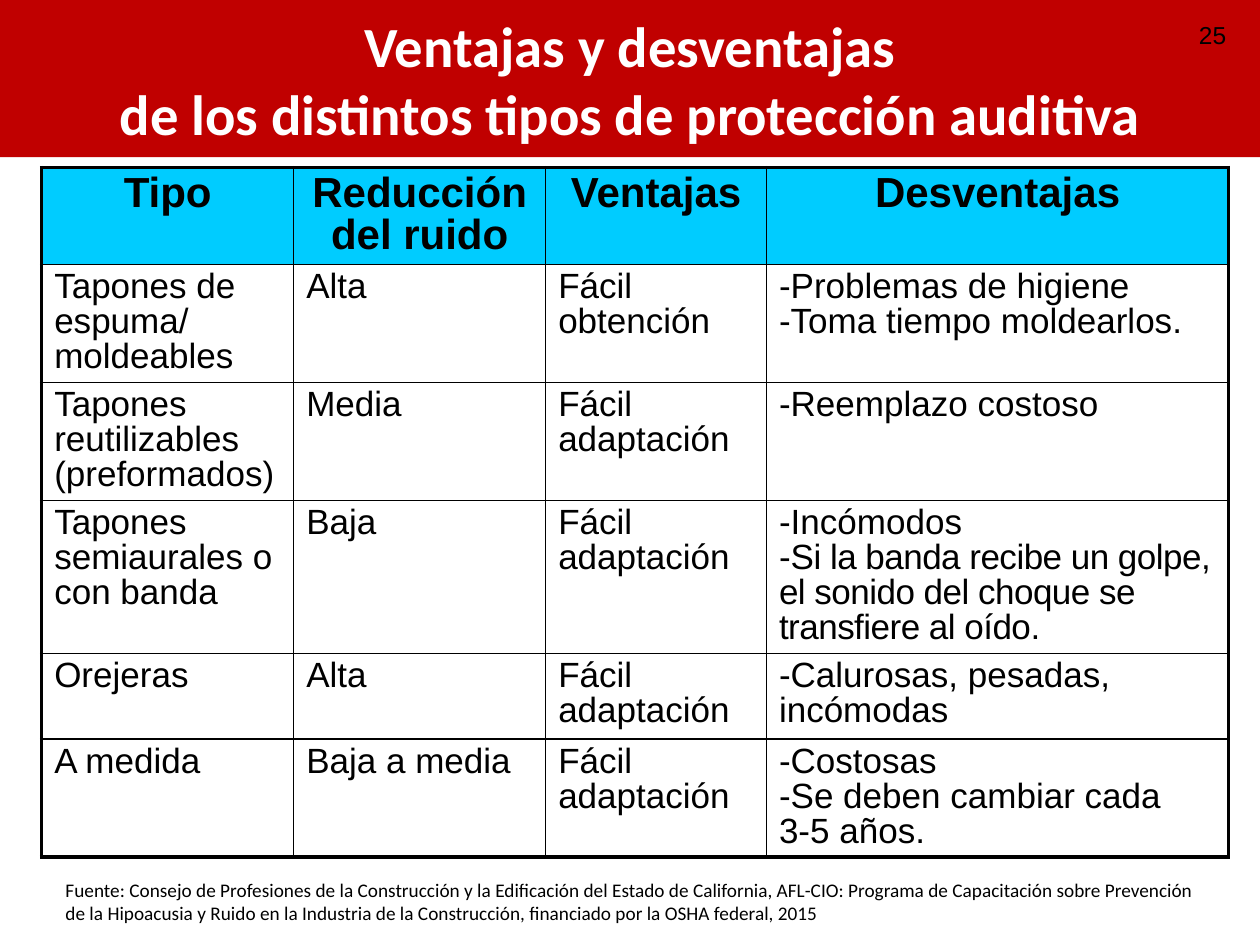
from lxml.etree import SubElement
from pptx import Presentation
from pptx.dml.color import RGBColor
from pptx.enum.shapes import MSO_SHAPE
from pptx.enum.text import MSO_ANCHOR, PP_ALIGN
from pptx.oxml.ns import qn
from pptx.util import Cm, Pt

COLORS = {"red": "C00000", "cyan": "00CCFF", "black": "000000", "white": "FFFFFF"}


def add_text(para, text, size, font="Arial", color="black", bold=False, spacing=0):
    """Add one run per line, with line breaks between them."""
    for index, line in enumerate(text.split("\n")):
        if index:
            para.add_line_break()
        if not line:
            continue
        span = para.add_run()
        span.text = line
        span.font.size = Pt(size)
        span.font.name = font
        span.font.bold = bold
        span.font.color.rgb = RGBColor.from_string(COLORS[color])
        if spacing:
            span.font._element.set("spc", str(spacing))


def set_border(cell, side, width, position):
    line = SubElement(cell._tc.get_or_add_tcPr(), qn(f"a:ln{side}"), w=str(Pt(width)))
    fill = SubElement(line, qn("a:solidFill"))
    SubElement(fill, qn("a:srgbClr"), val=COLORS["black"])
    cell._tc.tcPr.insert(position, line)


deck = Presentation()
deck.slide_width, deck.slide_height = Cm(25.4), Cm(19.05)
page = deck.slides.add_slide(deck.slide_layouts[6])

# Title band
band = page.shapes.add_shape(MSO_SHAPE.RECTANGLE, 0, 0, deck.slide_width, Cm(3.17))
band.shadow.inherit = False
band.fill.solid()
band.fill.fore_color.rgb = RGBColor.from_string(COLORS["red"])
band.line.fill.background()
band.text_frame.word_wrap = True
band.text_frame.vertical_anchor = MSO_ANCHOR.MIDDLE
para = band.text_frame.paragraphs[0]
para.alignment = PP_ALIGN.CENTER
add_text(para, "Ventajas y desventajas\nde los distintos tipos de protección auditiva",
         32.4, "Calibri", "white", bold=True)

# Comparison table: a cell is a text, or a list of (text, letter spacing)
rows = [
    ["Tipo", "Reducción del ruido", "Ventajas", "Desventajas"],
    ["Tapones de espuma/\nmoldeables", "Alta", "Fácil obtención",
     "-Problemas de higiene\n-Toma tiempo moldearlos."],
    ["Tapones reutilizables (preformados)", "Media", "Fácil adaptación",
     "-Reemplazo costoso"],
    ["Tapones semiaurales o\ncon banda", "Baja", "Fácil adaptación",
     [("-Incómodos\n-", 0),
      ("Si la banda recibe un golpe, el sonido del choque se transfiere al oído.", -30)]],
    ["Orejeras", "Alta", "Fácil adaptación", "-Calurosas, pesadas, incómodas"],
    ["A medida", "Baja a media", "Fácil adaptación",
     [("-Costosas\n", 0), ("-", -40), ("Se deben cambiar cada \n3-5 años.", 0)]],
]
widths = [5.08, 5.08, 4.45, 9.32]
heights = [1.93, 2.38, 2.38, 3.08, 1.73, 2.37]
frame = page.shapes.add_table(len(rows), len(widths), Cm(0.84), Cm(3.38),
                              Cm(sum(widths)), Cm(sum(heights)))
table = frame.table
table.first_row = table.horz_banding = False
for column, width in zip(table.columns, widths):
    column.width = Cm(width)
for table_row, height in zip(table.rows, heights):
    table_row.height = Cm(height)

last_row, last_column = len(rows) - 1, len(widths) - 1
for r, row in enumerate(rows):
    header = r == 0
    size = 24 if header else 20
    for c, content in enumerate(row):
        cell = table.cell(r, c)
        if header:
            cell.fill.solid()
            cell.fill.fore_color.rgb = RGBColor.from_string(COLORS["cyan"])
        else:
            cell.fill.background()
        para = cell.text_frame.paragraphs[0]
        para.alignment = PP_ALIGN.CENTER if header else PP_ALIGN.LEFT
        para.line_spacing = Pt(size)
        parts = [(content, 0)] if isinstance(content, str) else content
        for text, spacing in parts:
            add_text(para, text, size, bold=header, spacing=spacing)
        # Thick lines around the table, thin lines inside
        outer = {"L": c == 0, "R": c == last_column, "T": header, "B": r == last_row}
        for position, (side, thick) in enumerate(outer.items()):
            set_border(cell, side, 2.25 if thick else 1, position)

# Source note and page number
notes = [
    ("Fuente: Consejo de Profesiones de la Construcción y la Edificación del Estado de "
     "California, AFL-CIO: Programa de Capacitación sobre Prevención de la Hipoacusia y "
     "Ruido en la Industria de la Construcción, financiado por la OSHA federal, 2015",
     (1.07, 17.58, 23.29, 1.19), 11, "Calibri", PP_ALIGN.LEFT, MSO_ANCHOR.TOP),
    ("25", (19.05, 0.2, 5.92, 1.02), 14, "Arial", PP_ALIGN.RIGHT, MSO_ANCHOR.MIDDLE),
]
for text, place, size, font, alignment, anchor in notes:
    box = page.shapes.add_textbox(*[Cm(length) for length in place])
    box.text_frame.word_wrap = True
    box.text_frame.vertical_anchor = anchor
    para = box.text_frame.paragraphs[0]
    para.alignment = alignment
    add_text(para, text, size, font)

deck.save("out.pptx")
